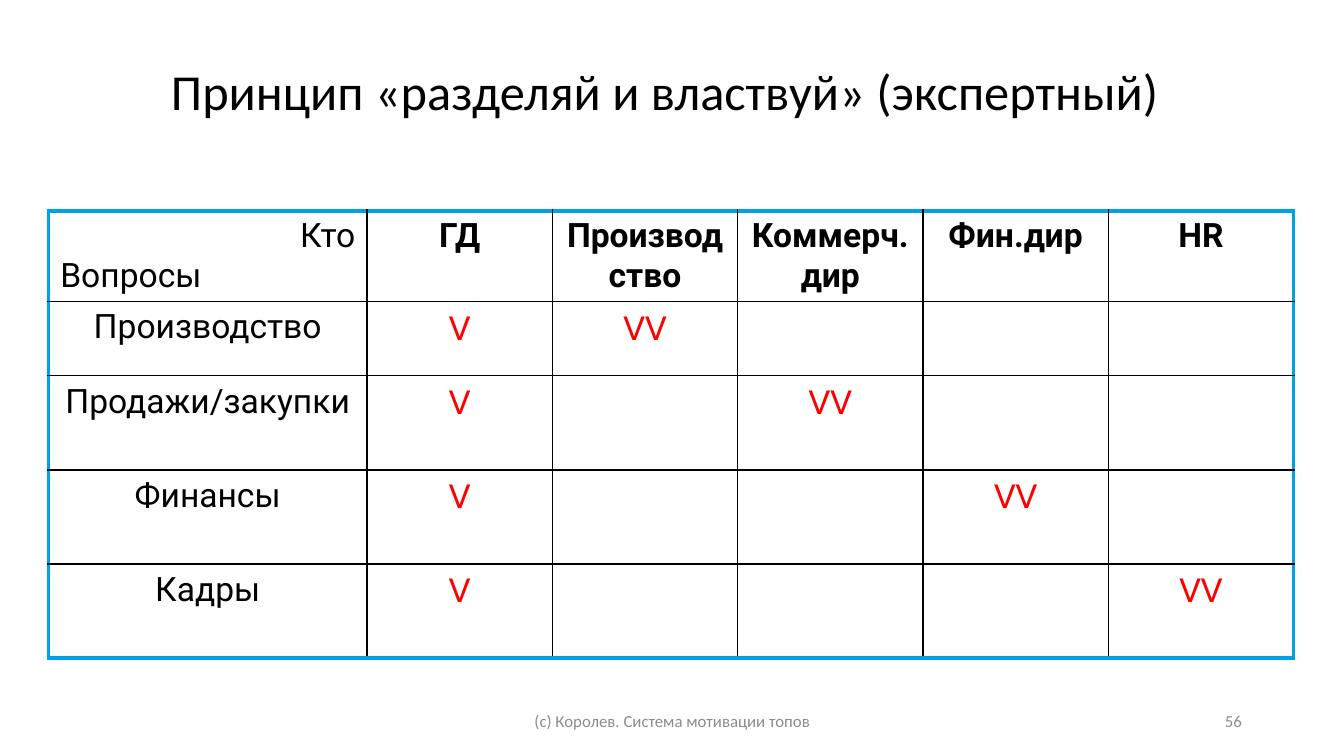
"""Build a slide with a responsibility table: questions against executives."""
from dataclasses import dataclass

import pptx
import pptx.dml.color
import pptx.enum.text
import pptx.oxml
import pptx.oxml.ns
import pptx.slide
import pptx.table
import pptx.text.text
import pptx.util

Cm = pptx.util.Cm
Align = pptx.enum.text.PP_ALIGN
Anchor = pptx.enum.text.MSO_ANCHOR


@dataclass(frozen=True)
class Style:
    font: str
    size: float
    color: str
    bold: bool = False


@dataclass(frozen=True)
class Theme:
    title: Style = Style("Calibri", 36, "000000")
    footer: Style = Style("Calibri", 12, "8C8C8C")
    question: Style = Style("Roboto", 24, "000000")
    executive: Style = Style("Roboto", 24, "000000", True)
    mark: Style = Style("Cabin", 24, "FF0000")
    frame_color: str = "00A3E0"
    frame_width: float = 3
    grid_color: str = "000000"
    grid_width: float = 1


@dataclass(frozen=True)
class Label:
    text: str
    left: float
    top: float
    width: float
    height: float
    style: Style
    align: Align
    anchor: Anchor
    line_points: float | None = None


THEME = Theme()
LABELS = (
    Label("Принцип «разделяй и властвуй» (экспертный)", 4.06, 1.78, 27.74, 1.45,
          THEME.title, Align.LEFT, Anchor.TOP, 32),
    Label("(с) Королев. Система мотивации топов", 11.23, 17.65, 11.43, 1.02,
          THEME.footer, Align.CENTER, Anchor.MIDDLE),
    Label("56", 23.93, 17.65, 7.62, 1.02,
          THEME.footer, Align.RIGHT, Anchor.MIDDLE),
)
EXECUTIVES = ("ГД", "Производство", "Коммерч. дир", "Фин.дир", "HR")
QUESTIONS = ("Производство", "Продажи/закупки", "Финансы", "Кадры")
COLUMN_WIDTHS = (8.03,) + (4.67,) * len(EXECUTIVES)
ROW_HEIGHTS = (2.29, 1.87, 2.37, 2.37, 2.37)


def style_paragraph(paragraph: pptx.text.text._Paragraph, style: Style, align: Align) -> None:
    """Set the alignment and font of a paragraph."""
    paragraph.alignment = align
    font = paragraph.font
    font.name = style.font
    font.size = pptx.util.Pt(style.size)
    font.bold = style.bold
    font.color.rgb = pptx.dml.color.RGBColor.from_string(style.color)


def add_label(slide: pptx.slide.Slide, label: Label) -> None:
    """Add one line of text outside the table."""
    box = slide.shapes.add_textbox(
        Cm(label.left), Cm(label.top), Cm(label.width), Cm(label.height))
    frame = box.text_frame
    frame.word_wrap = True
    frame.vertical_anchor = label.anchor
    frame.text = label.text
    paragraph = frame.paragraphs[0]
    if label.line_points:
        paragraph.line_spacing = pptx.util.Pt(label.line_points)
    style_paragraph(paragraph, label.style, label.align)


def add_border(cell: pptx.table._Cell, side: str, outer: bool) -> None:
    """Draw one side of a cell as outer frame or inner grid."""
    color = THEME.frame_color if outer else THEME.grid_color
    width = pptx.util.Pt(THEME.frame_width if outer else THEME.grid_width)
    cell._tc.get_or_add_tcPr().append(pptx.oxml.parse_xml(
        f'<a:ln{side} {pptx.oxml.ns.nsdecls("a")} w="{width}">'
        f'<a:solidFill><a:srgbClr val="{color}"/></a:solidFill></a:ln{side}>'))


def write_cell(cell: pptx.table._Cell, text: str, style: Style,
               aligns: tuple[Align, ...] = (Align.CENTER,)) -> None:
    """Write the paragraphs of a cell, each with its alignment."""
    cell.text = text
    for paragraph, align in zip(cell.text_frame.paragraphs, aligns):
        style_paragraph(paragraph, style, align)


def add_responsibilities(slide: pptx.slide.Slide) -> None:
    """Add the table of questions and the executives who decide them."""
    table = slide.shapes.add_table(
        len(ROW_HEIGHTS), len(COLUMN_WIDTHS), Cm(1.22), Cm(5.31),
        Cm(sum(COLUMN_WIDTHS)), Cm(sum(ROW_HEIGHTS))).table
    table.first_row = table.horz_banding = False
    for column, width in zip(table.columns, COLUMN_WIDTHS):
        column.width = Cm(width)
    for row, height in zip(table.rows, ROW_HEIGHTS):
        row.height = Cm(height)

    last_row, last_column = len(QUESTIONS), len(EXECUTIVES)
    for row_index, row in enumerate(table.rows):
        for column_index, cell in enumerate(row.cells):
            cell.margin_left = cell.margin_right = Cm(0.3)
            cell.margin_top = cell.margin_bottom = Cm(0.15)
            add_border(cell, "L", column_index == 0)
            add_border(cell, "R", column_index == last_column)
            add_border(cell, "T", row_index == 0)
            add_border(cell, "B", row_index == last_row)
            cell.fill.background()

    write_cell(table.cell(0, 0), "Кто\nВопросы", THEME.question, (Align.RIGHT, Align.LEFT))
    for column_index, executive in enumerate(EXECUTIVES, 1):
        write_cell(table.cell(0, column_index), executive, THEME.executive)
    for row_index, question in enumerate(QUESTIONS, 1):
        write_cell(table.cell(row_index, 0), question, THEME.question)
        write_cell(table.cell(row_index, 1), "V", THEME.mark)
        write_cell(table.cell(row_index, row_index + 1), "VV", THEME.mark)


def main() -> None:
    """Build and save the slide."""
    deck = pptx.Presentation()
    deck.slide_width, deck.slide_height = Cm(33.87), Cm(19.05)
    slide = deck.slides.add_slide(deck.slide_layouts[6])
    add_responsibilities(slide)
    for label in LABELS:
        add_label(slide, label)
    deck.save("out.pptx")


if __name__ == "__main__":
    main()
